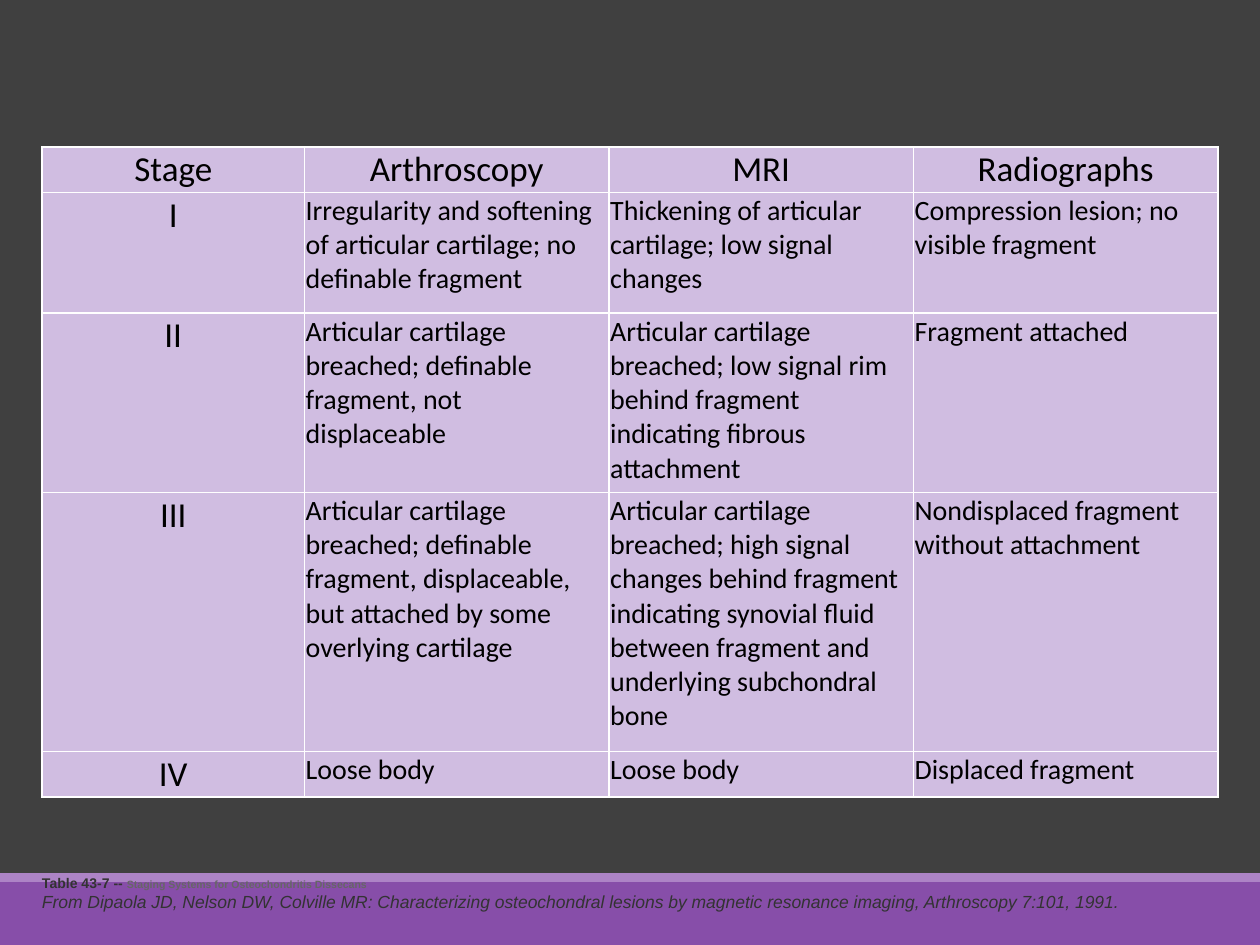
from dataclasses import dataclass

from lxml import etree
from pptx import Presentation
from pptx.dml.color import RGBColor
from pptx.enum.shapes import MSO_SHAPE
from pptx.enum.text import MSO_ANCHOR, PP_ALIGN
from pptx.oxml.ns import qn
from pptx.util import Pt

RECT = MSO_SHAPE.RECTANGLE
TOP, BOTTOM = MSO_ANCHOR.TOP, MSO_ANCHOR.BOTTOM
LEFT, CENTER = PP_ALIGN.LEFT, PP_ALIGN.CENTER
BLANK = 6


@dataclass(frozen=True)
class Theme:
    background: str = "404040"
    band: str = "874EA9"
    stripe: str = "AD84C6"
    cell: str = "D0BDE1"
    border: str = "FFFFFF"
    text: str = "000000"
    source: str = "333333"
    caption: str = "666666"
    table_font: str = "Calibri"
    source_font: str = "Arial"
    heading_size: float = 20
    body_size: float = 16
    label_size: float = 8
    caption_size: float = 6
    source_size: float = 10


THEME = Theme()

COLUMN_WIDTHS = (150, 174, 174, 174)
ROW_HEIGHTS = (26, 69, 102.5, 148, 26)
STAGES = (
    ("Stage", "Arthroscopy", "MRI", "Radiographs"),
    ("I",
     "Irregularity and softening of articular cartilage; no definable fragment",
     "Thickening of articular cartilage; low signal changes",
     "Compression lesion; no visible fragment"),
    ("II",
     "Articular cartilage breached; definable fragment, not displaceable",
     "Articular cartilage breached; low signal rim behind fragment indicating fibrous attachment",
     "Fragment attached"),
    ("III",
     "Articular cartilage breached; definable fragment, displaceable, but attached by some overlying cartilage",
     "Articular cartilage breached; high signal changes behind fragment indicating synovial fluid "
     "between fragment and underlying subchondral bone",
     "Nondisplaced fragment without attachment"),
    ("IV", "Loose body", "Loose body", "Displaced fragment"),
)


def rgb(value):
    return RGBColor.from_string(value)


def set_font(font, name, size, color, bold=False, italic=False):
    font.name = name
    font.size = Pt(size)
    font.color.rgb = rgb(color)
    font.bold = bold
    font.italic = italic


def set_margins(target, margin):
    target.margin_left = target.margin_right = Pt(margin)
    target.margin_top = target.margin_bottom = Pt(margin)


def add_band(s, top, height, color):
    sp = s.shapes.add_shape(RECT, 0, Pt(top), Pt(720), Pt(height))
    sp.shadow.inherit = False
    sp.fill.solid()
    sp.fill.fore_color.rgb = rgb(color)
    sp.line.fill.background()


def set_borders(cell, color, width):
    tcPr = cell._tc.get_or_add_tcPr()
    for i, side in enumerate(("a:lnL", "a:lnR", "a:lnT", "a:lnB")):
        ln = etree.Element(qn(side), w=str(Pt(width)))
        fill = etree.SubElement(ln, qn("a:solidFill"))
        etree.SubElement(fill, qn("a:srgbClr"), val=color)
        tcPr.insert(i, ln)


def format_cell(cell, text, is_header, is_heading):
    cell.fill.solid()
    cell.fill.fore_color.rgb = rgb(THEME.cell)
    set_borders(cell, THEME.border, 1)
    set_margins(cell, 0.72)
    cell.vertical_anchor = BOTTOM if is_header else TOP
    cell.text = text
    p = cell.text_frame.paragraphs[0]
    p.alignment = CENTER if is_heading else LEFT
    size = THEME.heading_size if is_heading else THEME.body_size
    set_font(p.font, THEME.table_font, size, THEME.text)


def add_stage_table(s):
    frame = s.shapes.add_table(
        len(STAGES), len(COLUMN_WIDTHS), Pt(24), Pt(84),
        Pt(sum(COLUMN_WIDTHS)), Pt(sum(ROW_HEIGHTS)))
    table = frame.table
    for column, width in zip(table.columns, COLUMN_WIDTHS):
        column.width = Pt(width)
    for row, height in zip(table.rows, ROW_HEIGHTS):
        row.height = Pt(height)
    for r, texts in enumerate(STAGES):
        for c, text in enumerate(texts):
            format_cell(table.cell(r, c), text, r == 0, r == 0 or c == 0)


def add_source_note(s):
    tf = s.shapes.add_textbox(Pt(24), Pt(499.5), Pt(621), Pt(36)).text_frame
    tf.word_wrap = True
    tf.vertical_anchor = TOP
    set_margins(tf, 0)
    p = tf.paragraphs[0]
    for text, size, color in (
        ("Table 43-7 -- ", THEME.label_size, THEME.source),
        ("Staging Systems for Osteochondritis Dissecans", THEME.caption_size, THEME.caption),
    ):
        r = p.add_run()
        r.text = text
        set_font(r.font, THEME.source_font, size, color, bold=True)
    p = tf.add_paragraph()
    p.text = ("From Dipaola JD, Nelson DW, Colville MR: Characterizing osteochondral lesions "
              "by magnetic resonance imaging, Arthroscopy 7:101, 1991.")
    set_font(p.font, THEME.source_font, THEME.source_size, THEME.source, italic=True)


def main():
    prs = Presentation()
    prs.slide_width, prs.slide_height = Pt(720), Pt(540)
    s = prs.slides.add_slide(prs.slide_layouts[BLANK])
    s.background.fill.solid()
    s.background.fill.fore_color.rgb = rgb(THEME.background)
    add_band(s, 504, 36, THEME.band)
    add_band(s, 499, 5, THEME.stripe)
    add_stage_table(s)
    add_source_note(s)
    prs.save("out.pptx")


if __name__ == "__main__":
    main()
